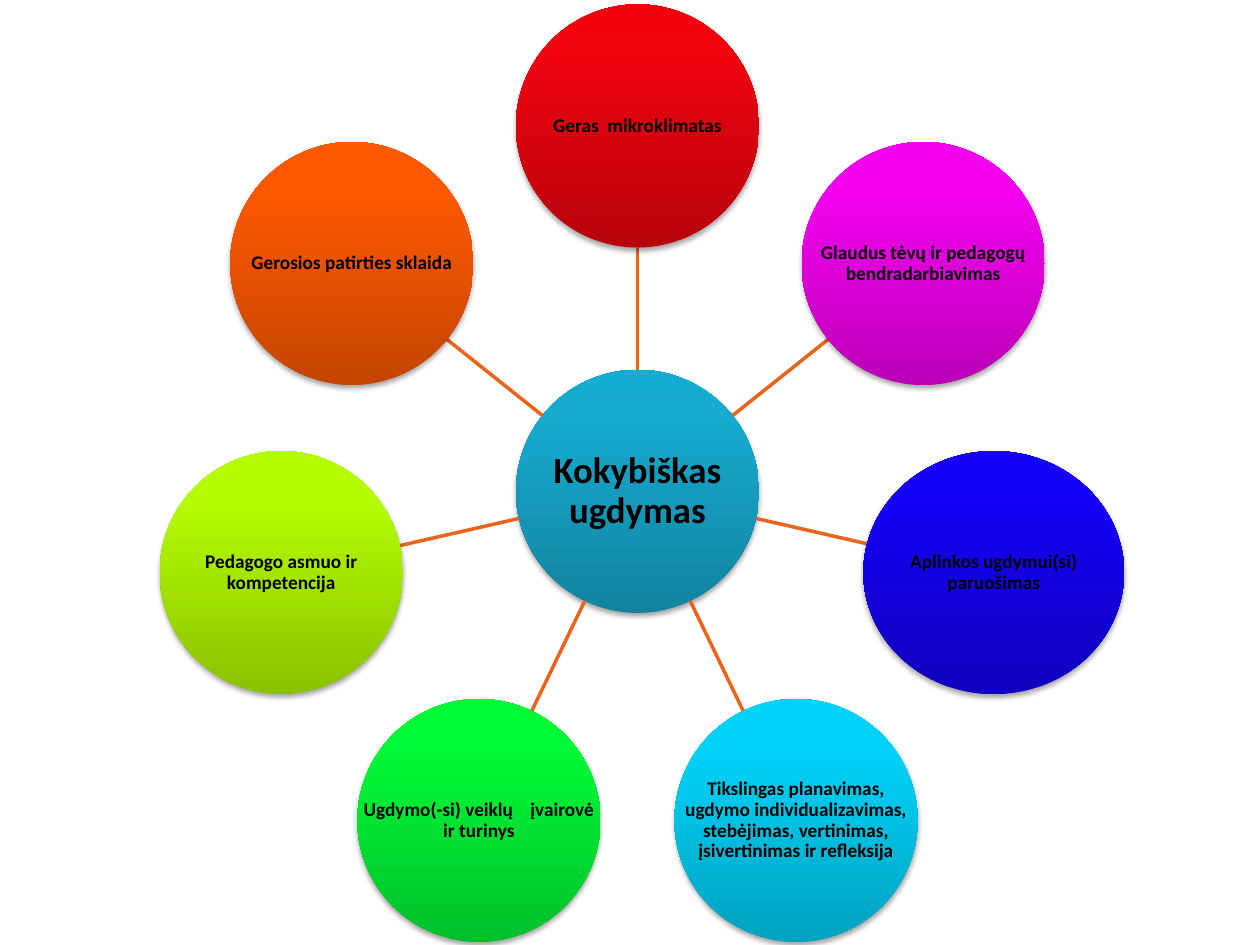
import math
import lxml.etree
import pptx
import pptx.dml.color
import pptx.enum.shapes
import pptx.enum.text
import pptx.oxml.ns
import pptx.util

Inches, Pt = pptx.util.Inches, pptx.util.Pt
Color = pptx.dml.color.RGBColor.from_string
qn = pptx.oxml.ns.qn

COLORS = {
    "text": "000000",
    "line": "EB641B",
    "teal": ("11839F", "16AACE", "13ADD3"),
    "red": ("B8020B", "EE030E", "F2000C"),
    "pink": ("BB00B8", "F301EE", "F500F0"),
    "blue": ("1000BD", "1500F5", "1500F7"),
    "cyan": ("00A2BF", "00D2F8", "00D3F9"),
    "green": ("00C02A", "00FA36", "00FB37"),
    "lime": ("8BC200", "B4FC00", "B5FD00"),
    "orange": ("C44500", "FE5900", "FF5A00"),
}
HUB = ("Kokybiškas ugdymas", "teal")
SIZE = 1.93
RING = [
    ("Geras  mikroklimatas", "red", SIZE),
    ("Glaudus tėvų ir pedagogų bendradarbiavimas", "pink", SIZE),
    ("Aplinkos ugdymui(si) paruošimas", "blue", 2.07),
    ("Tikslingas planavimas, ugdymo individualizavimas, stebėjimas, "
     "vertinimas, įsivertinimas ir refleksija", "cyan", SIZE),
    ("Ugdymo(-si) veiklų    įvairovė ir turinys", "green", SIZE),
    ("Pedagogo asmuo ir kompetencija", "lime", SIZE),
    ("Gerosios patirties sklaida", "orange", SIZE),
]
MID_X, MID_Y, REACH = 5.06, 3.9, 2.9


def add(root, tag, **attrs):
    return lxml.etree.SubElement(root, qn(tag), {k: str(v) for k, v in attrs.items()})


def shade(shape, tones):
    props = shape._element.spPr
    grad = add(props, "a:gradFill", rotWithShape=1)
    stops = add(grad, "a:gsLst")
    for pos, tone in zip((0, 80, 100), tones):
        add(add(stops, "a:gs", pos=pos * 1000), "a:srgbClr", val=tone)
    add(grad, "a:lin", ang=270 * 60000, scaled=0)
    props.insert(2, grad)
    shape.line.fill.background()
    shape.shadow.inherit = False
    glow = add(props.find(qn("a:effectLst")), "a:outerShdw", blurRad=Pt(3.1),
               dist=Pt(1.8), dir=90 * 60000, rotWithShape=0)
    tint = add(glow, "a:srgbClr", val=COLORS["text"])
    add(tint, "a:alpha", val=35000)


def circle(slide, text, tone, x, y, width, size):
    area = [Inches(v) for v in (x - width / 2, y - SIZE / 2, width, SIZE)]
    disc = slide.shapes.add_shape(pptx.enum.shapes.MSO_SHAPE.OVAL, *area)
    shade(disc, COLORS[tone])
    frame = slide.shapes.add_textbox(*area).text_frame
    frame.word_wrap = True
    frame.vertical_anchor = pptx.enum.text.MSO_ANCHOR.MIDDLE
    for side in ("left", "right", "top", "bottom"):
        setattr(frame, "margin_" + side, Inches(0.01))
    para = frame.paragraphs[0]
    para.alignment = pptx.enum.text.PP_ALIGN.CENTER
    para.line_spacing = 0.9
    run = para.add_run()
    run.text = text
    font = run.font
    font.name, font.size, font.bold = "Calibri", Pt(size), True
    font.color.rgb = Color(COLORS["text"])


def spoke(slide, dx, dy, width):
    start = SIZE / 2
    end = REACH - 1 / math.hypot(2 * dx / width, 2 * dy / SIZE)
    ends = [Inches(mid + step * far) for far in (start, end)
            for mid, step in ((MID_X, dx), (MID_Y, dy))]
    line = slide.shapes.add_connector(pptx.enum.shapes.MSO_CONNECTOR.STRAIGHT, *ends)
    line.line.color.rgb = Color(COLORS["line"])
    line.line.width = Pt(2)
    add(line._element.spPr, "a:effectLst")


def main():
    """Build the slide of seven circles around a hub."""
    deck = pptx.Presentation()
    deck.slide_width, deck.slide_height = Inches(10), Inches(7.5)
    slide = deck.slides.add_slide(deck.slide_layouts[6])
    circle(slide, *HUB, MID_X, MID_Y, SIZE, 21)
    for i, (text, tone, width) in enumerate(RING):
        turn = 2 * math.pi * i / len(RING)
        dx, dy = math.sin(turn), -math.cos(turn)
        spoke(slide, dx, dy, width)
        circle(slide, text, tone, MID_X + REACH * dx, MID_Y + REACH * dy, width, 11)
    deck.save("out.pptx")


if __name__ == "__main__":
    main()
